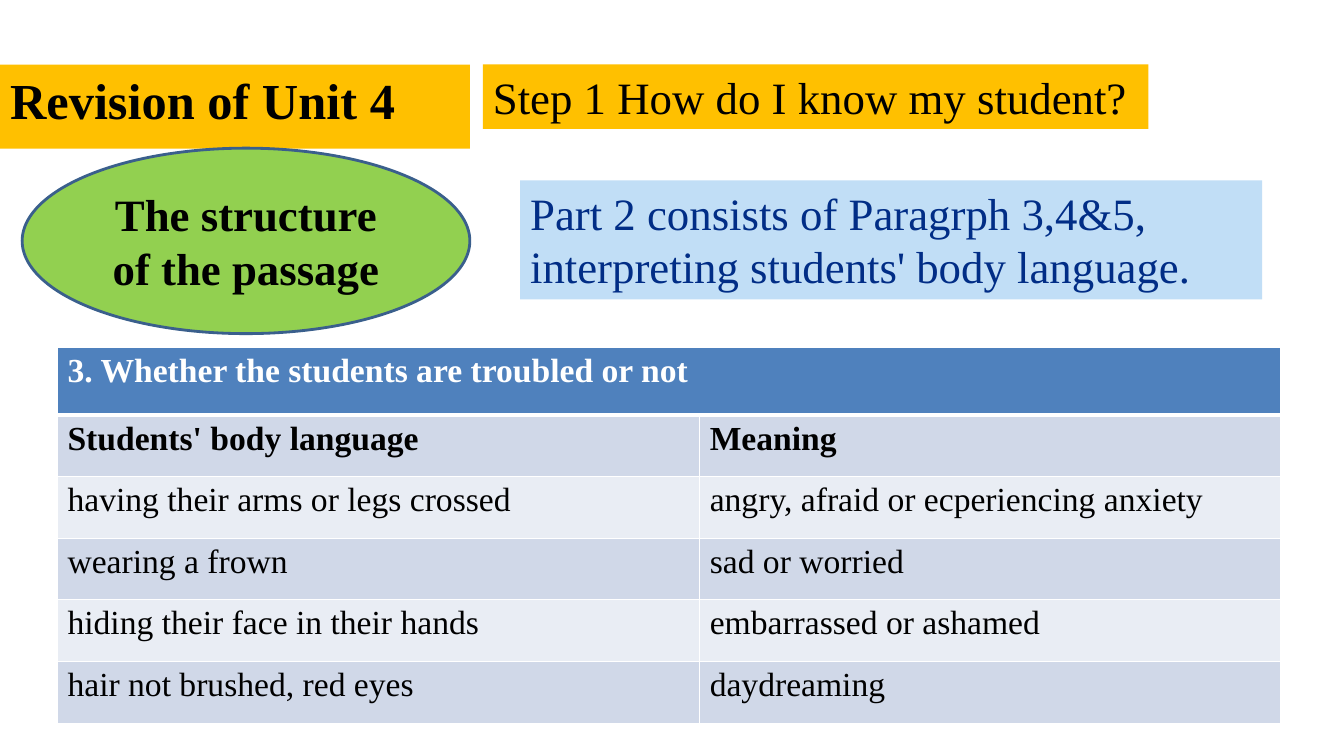
from pptx import Presentation
from pptx.dml.color import RGBColor
from pptx.enum.shapes import MSO_SHAPE
from pptx.enum.text import MSO_ANCHOR, MSO_AUTO_SIZE, PP_ALIGN
from pptx.oxml import parse_xml
from pptx.oxml.ns import nsdecls
from pptx.util import Inches, Pt

FONT = "Times New Roman"
COLORS = {
    "black": "000000", "white": "FFFFFF", "amber": "FFC000", "green": "92D050",
    "outline": "3A5F8C", "sky": "C1DEF6", "navy": "012D86",
    "header": "4F81BD", "band_dark": "D0D8E8", "band_light": "E9EDF4",
}
HEADING = "3. Whether the students are troubled or not"
ROWS = [
    ("Students' body language", "Meaning"),
    ("having their arms or legs crossed", "angry, afraid or ecperiencing anxiety"),
    ("wearing a frown", "sad or worried"),
    ("hiding their face in their hands", "embarrassed or ashamed"),
    ("hair not brushed, red eyes", "daydreaming"),
]
COLUMN_WIDTHS = [6.37, 5.76]
ROW_HEIGHTS = [0.67, 0.61, 0.61, 0.61, 0.61, 0.62]


def rgb(name):
    return RGBColor.from_string(COLORS[name])


def fill(target, color):
    target.fill.solid()
    target.fill.fore_color.rgb = rgb(color)


def write(tf, text, size, color="black", bold=False, align=PP_ALIGN.LEFT):
    p = tf.paragraphs[0]
    p.alignment = align
    r = p.add_run()
    r.text = text
    r.font.name = FONT
    r.font.size = Pt(size)
    r.font.bold = bold
    r.font.color.rgb = rgb(color)


def place(sp, left, top, width, height):
    sp.left, sp.top = Inches(left), Inches(top)
    sp.width, sp.height = Inches(width), Inches(height)


def format_label(sp, box, background, text, size, color="black", bold=False):
    place(sp, *box)
    fill(sp, background)
    tf = sp.text_frame
    tf.word_wrap = True
    tf.auto_size = MSO_AUTO_SIZE.SHAPE_TO_FIT_TEXT
    tf.vertical_anchor = MSO_ANCHOR.TOP
    write(tf, text, size, color, bold)


def add_label(s, box, *style):
    sp = s.shapes.add_textbox(*(Inches(v) for v in box))
    format_label(sp, box, *style)


def add_topic_oval(s, box, text):
    sp = s.shapes.add_shape(MSO_SHAPE.OVAL, *(Inches(v) for v in box))
    sp.shadow.inherit = False
    fill(sp, "green")
    sp.line.color.rgb = rgb("outline")
    sp.line.width = Pt(2)
    tf = sp.text_frame
    tf.word_wrap = True
    tf.vertical_anchor = MSO_ANCHOR.MIDDLE
    write(tf, text, 32, bold=True, align=PP_ALIGN.CENTER)


def set_borders(cell, top=1, bottom=1):
    widths = {"lnL": 1, "lnR": 1, "lnT": top, "lnB": bottom}
    tcPr = cell._tc.get_or_add_tcPr()
    for i, (side, width) in enumerate(widths.items()):
        tcPr.insert(i, parse_xml(
            f'<a:{side} {nsdecls("a")} w="{Pt(width)}"><a:solidFill>'
            f'<a:srgbClr val="{COLORS["white"]}"/></a:solidFill></a:{side}>'))


def add_meaning_table(s, left, top):
    frame = s.shapes.add_table(
        len(ROW_HEIGHTS), len(COLUMN_WIDTHS), Inches(left), Inches(top),
        Inches(sum(COLUMN_WIDTHS)), Inches(sum(ROW_HEIGHTS)))
    table = frame.table
    for column, width in zip(table.columns, COLUMN_WIDTHS):
        column.width = Inches(width)
    for row, height in zip(table.rows, ROW_HEIGHTS):
        row.height = Inches(height)

    # Heading row across both columns
    table.cell(0, 0).merge(table.cell(0, 1))
    write(table.cell(0, 0).text_frame, HEADING, 24, "white", True)
    for cell in table.rows[0].cells:
        fill(cell, "header")
        set_borders(cell, bottom=3)

    # Banded rows
    for i, texts in enumerate(ROWS, start=1):
        for cell, text in zip(table.rows[i].cells, texts):
            fill(cell, "band_dark" if i % 2 else "band_light")
            set_borders(cell, top=3 if i == 1 else 1)
            write(cell.text_frame, text, 24, bold=i == 1)


def main():
    prs = Presentation()
    prs.slide_width, prs.slide_height = Inches(13.33), Inches(7.5)
    s = prs.slides.add_slide(prs.slide_layouts[5])

    # Title and step
    format_label(s.shapes.title, (0, 0.64, 4.66, 0.71), "amber",
                 "Revision of Unit 4", 36, "black", True)
    add_label(s, (4.79, 0.64, 6.6, 0.64), "amber",
              "Step 1 How do I know my student?", 32)

    # Topic and summary
    add_topic_oval(s, (0.22, 1.47, 4.44, 1.84), "The structure of the passage")
    add_label(s, (5.16, 1.79, 7.36, 1.18), "sky",
              "Part 2 consists of Paragrph 3,4&5, "
              "interpreting students' body language.", 32, "navy")

    # Body language and its meaning
    add_meaning_table(s, 0.57, 3.45)
    prs.save("out.pptx")


if __name__ == "__main__":
    main()
